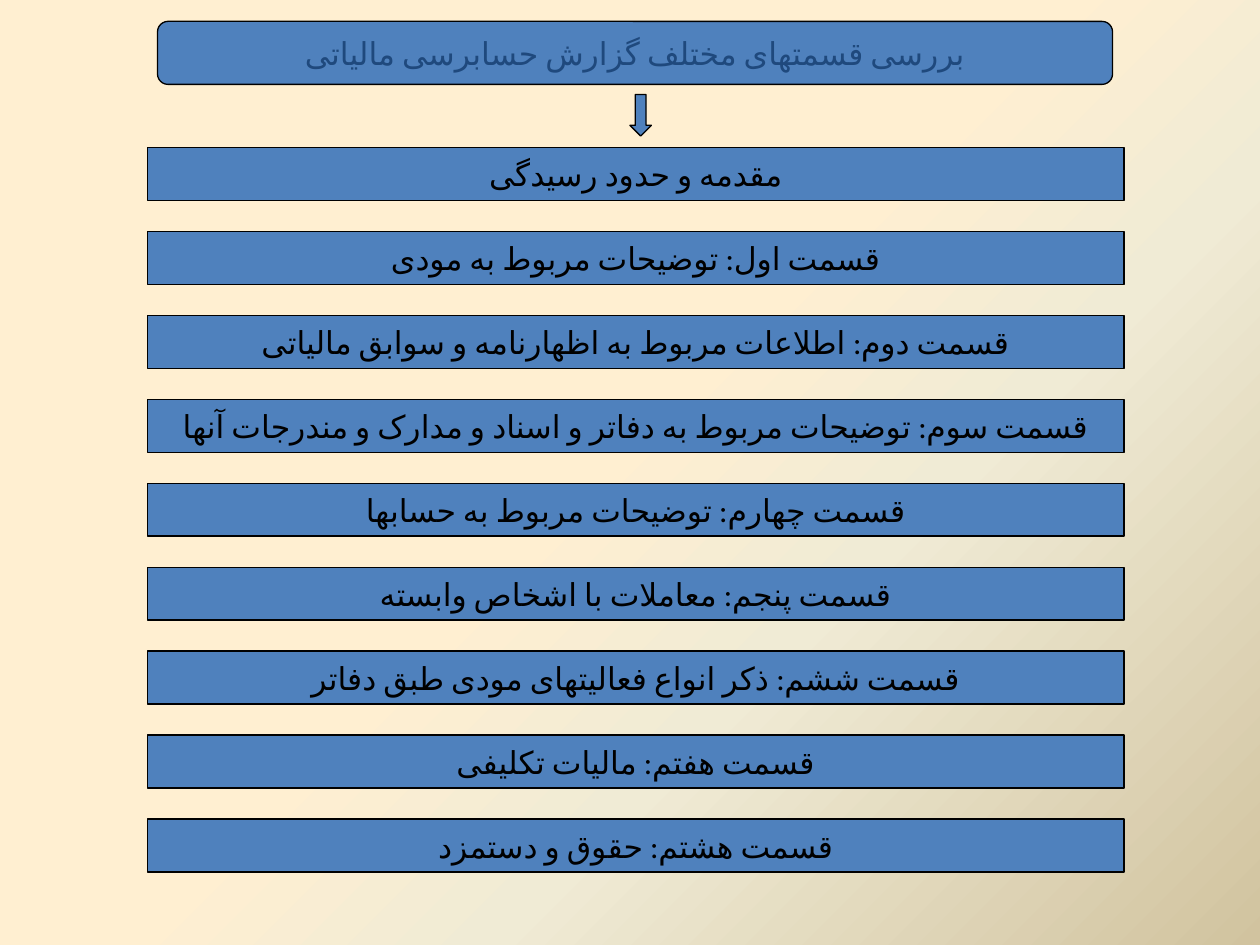
import copy

import lxml.etree
import pptx
import pptx.dml.color
import pptx.enum.lang
import pptx.enum.shapes
import pptx.enum.text
import pptx.oxml.ns
import pptx.util

Inches = pptx.util.Inches
Shape = pptx.enum.shapes.MSO_SHAPE
COLORS = {
    "fill": "4F81BD",
    "line": "000000",
    "title": "1F497D",
    "text": "000000",
    "cream": "FFEFD1",
    "sand": "F0EBD5",
    "tan": "D1C39F",
}
TITLE = "بررسی قسمتهای مختلف گزارش حسابرسی مالیاتی"
PARTS = [
    "مقدمه و حدود رسیدگی",
    "قسمت اول: توضیحات مربوط به مودی",
    "قسمت دوم: اطلاعات مربوط به اظهارنامه و سوابق مالیاتی",
    "قسمت سوم: توضیحات مربوط به دفاتر و اسناد و مدارک و مندرجات آنها",
    "قسمت چهارم: توضیحات مربوط به حسابها",
    "قسمت پنجم: معاملات با اشخاص وابسته",
    "قسمت ششم: ذکر انواع فعالیتهای مودی طبق دفاتر",
    "قسمت هفتم: مالیات تکلیفی",
    "قسمت هشتم: حقوق و دستمزد",
]


def color(name):
    return pptx.dml.color.RGBColor.from_string(COLORS[name])


def write(shape, text, size=18, font="Calibri", tone="text"):
    frame = shape.text_frame
    frame.word_wrap = True
    frame.vertical_anchor = pptx.enum.text.MSO_ANCHOR.MIDDLE
    para = frame.paragraphs[0]
    para.alignment = pptx.enum.text.PP_ALIGN.CENTER
    para._p.get_or_add_pPr().set("rtl", "1")
    run = para.add_run()
    run.text = text
    run.font.size = pptx.util.Pt(size)
    run.font.name = font
    run.font.color.rgb = color(tone)
    run.font.language_id = pptx.enum.lang.MSO_LANGUAGE_ID.FARSI
    props = run._r.get_or_add_rPr()
    lxml.etree.SubElement(props, pptx.oxml.ns.qn("a:cs"), typeface=font)


def draw(slide, kind, left, top, width, height):
    shape = slide.shapes.add_shape(
        kind, Inches(left), Inches(top), Inches(width), Inches(height)
    )
    shape.shadow.inherit = False
    shape.fill.solid()
    shape.fill.fore_color.rgb = color("fill")
    shape.line.color.rgb = color("line")
    shape.line.width = pptx.util.Pt(0.75)
    return shape


def paint(slide):
    fill = slide.background.fill
    fill.gradient()
    fill.gradient_angle = 315
    stops = slide.element.xpath("p:cSld/p:bg//a:gsLst")[0]
    stops.append(copy.deepcopy(stops[-1]))
    tones = [(0.48, "cream"), (0.65, "sand"), (1, "tan")]
    for stop, (place, tone) in zip(fill.gradient_stops, tones):
        stop.position = place
        stop.color.rgb = color(tone)


def add_head(slide, left, top, width, height):
    bar = draw(slide, Shape.ROUNDED_RECTANGLE, left, top, width, height)
    write(bar, TITLE, tone="title")


def add_list(slide, left, top, width, height, bar=0.42):
    step = (height - bar) / (len(PARTS) - 1)
    for row, text in enumerate(PARTS):
        shape = draw(slide, Shape.RECTANGLE, left, top + row * step, width, bar)
        write(shape, text)


def main():
    deck = pptx.Presentation()
    deck.slide_width = Inches(10)
    deck.slide_height = Inches(7.5)
    slide = deck.slides.add_slide(deck.slide_layouts[6])
    paint(slide)
    add_head(slide, 1.25, 0.17, 7.58, 0.5)
    add_list(slide, 1.17, 1.17, 7.75, 5.75)
    draw(slide, Shape.DOWN_ARROW, 5, 0.75, 0.17, 0.33)
    deck.save("out.pptx")


if __name__ == "__main__":
    main()
